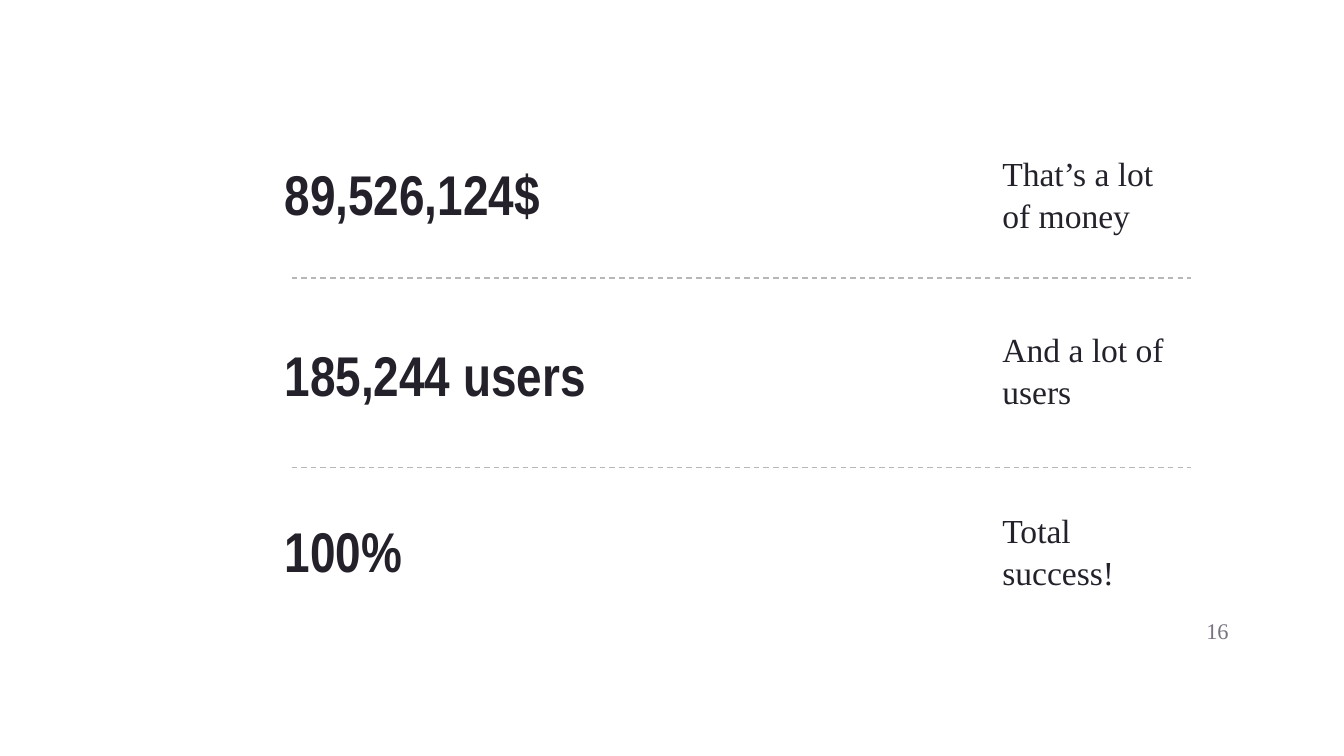
import pptx
import pptx.dml.color
import pptx.enum.dml
import pptx.enum.shapes
import pptx.enum.text
import pptx.oxml.ns
import pptx.util
from lxml import etree

INK, MUTED, RULE = "25212A", "797281", "B7B7B7"
HEADING_FONT, BODY_FONT = "Arial Narrow", "Times New Roman"


def color(hex_value):
    return pptx.dml.color.RGBColor.from_string(hex_value)


class Deck:
    """Draws styled elements on one slide, measured on a grid of tenths of an inch."""

    def __init__(self, columns, rows):
        self.presentation = pptx.Presentation()
        self.presentation.slide_width = self.cells(columns)
        self.presentation.slide_height = self.cells(rows)
        self.slide = self.presentation.slides.add_slide(self.presentation.slide_layouts[6])

    def cells(self, count):
        return pptx.util.Inches(count / 10)

    def text(self, words, left, middle, width, height, size, font=BODY_FONT,
             ink=INK, bold=False, align="LEFT", spacing=1.0):
        box = self.slide.shapes.add_textbox(
            self.cells(left), self.cells(middle - height / 2),
            self.cells(width), self.cells(height))
        frame = box.text_frame
        frame.word_wrap = True
        frame.vertical_anchor = pptx.enum.text.MSO_ANCHOR.MIDDLE
        frame.margin_left = frame.margin_right = self.cells(1)
        frame.margin_top = frame.margin_bottom = self.cells(1)
        paragraph = frame.paragraphs[0]
        paragraph.alignment = pptx.enum.text.PP_ALIGN[align]
        paragraph.line_spacing = spacing
        run = paragraph.add_run()
        run.text = words
        run.font.name = font
        run.font.size = pptx.util.Pt(size)
        run.font.bold = bold
        run.font.color.rgb = color(ink)

    def figure(self, words, middle):
        self.text(words, 20.2, middle, 65.6, 9.3, 30, font=HEADING_FONT, bold=True)

    def caption(self, words, middle):
        self.text(words, 73.6, middle, 14.6, 5.1, 18, spacing=1.05)

    def page_number(self, number):
        self.text(number, 86.4, 46.95, 6, 4.3, 12, ink=MUTED, align="RIGHT")

    def divider(self, row):
        rule = self.slide.shapes.add_connector(
            pptx.enum.shapes.MSO_CONNECTOR.STRAIGHT,
            self.cells(21.7), self.cells(row), self.cells(88.6), self.cells(row))
        rule.line.color.rgb = color(RULE)
        rule.line.width = pptx.util.Pt(0.75)
        rule.line.dash_style = pptx.enum.dml.MSO_LINE.DASH
        etree.SubElement(rule._element.spPr, pptx.oxml.ns.qn("a:effectLst"))


def main():
    deck = Deck(100, 56.25)
    statistics = [
        ("89,526,124$", 14.35, "That’s a lot of money", 14.35),
        ("185,244 users", 27.85, "And a lot of users", 27.45),
        ("100%", 40.95, "Total success!", 40.95),
    ]
    for amount, amount_row, remark, remark_row in statistics:
        deck.figure(amount, amount_row)
        deck.caption(remark, remark_row)
    deck.page_number("16")
    for row in (20.7, 34.8):
        deck.divider(row)
    deck.presentation.save("out.pptx")


if __name__ == "__main__":
    main()
